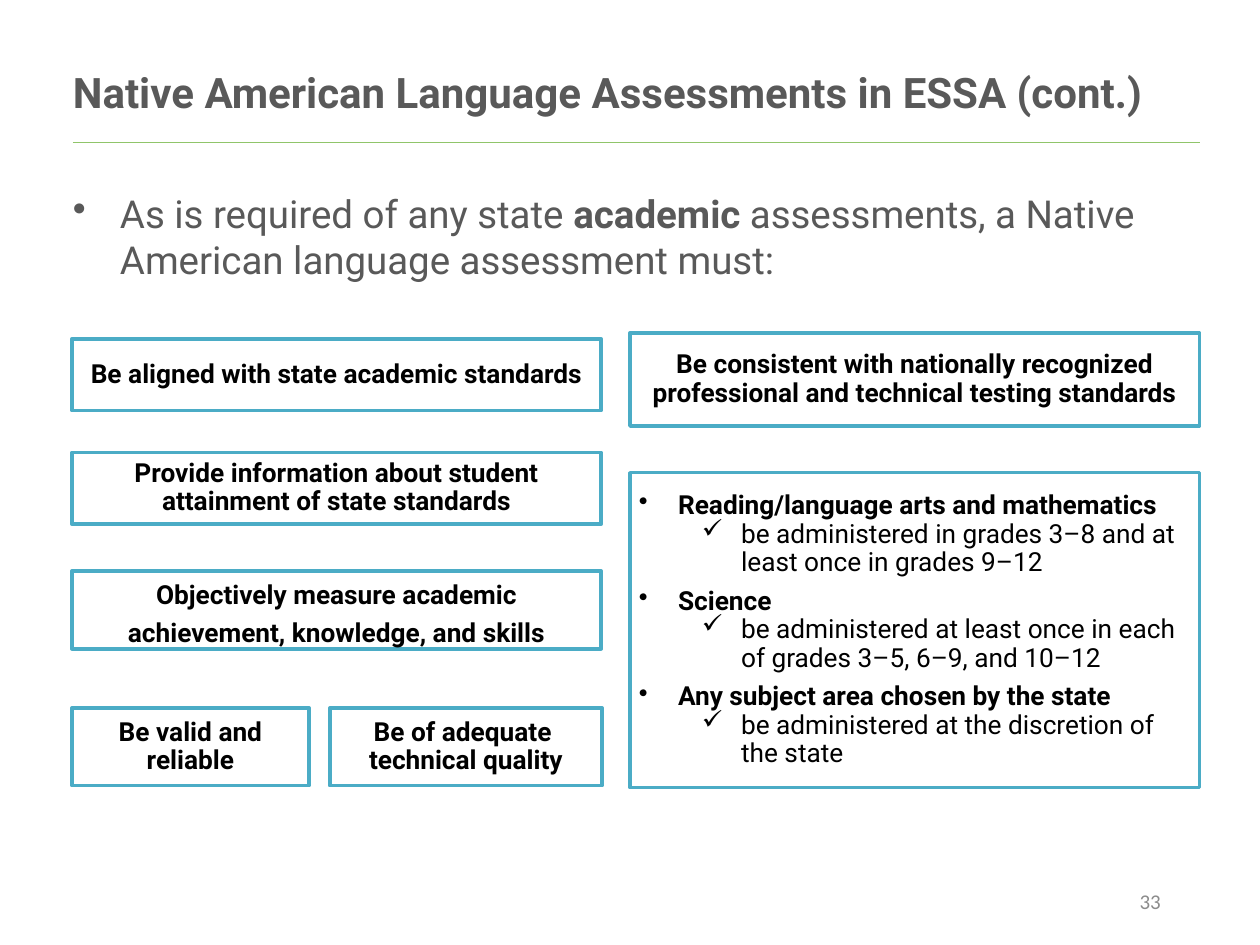
from dataclasses import dataclass

from lxml import etree
from pptx import Presentation
from pptx.dml.color import RGBColor
from pptx.enum.shapes import MSO_CONNECTOR, MSO_SHAPE
from pptx.enum.text import MSO_ANCHOR, PP_ALIGN
from pptx.oxml.ns import qn
from pptx.util import Cm, Pt

STRAIGHT = MSO_CONNECTOR.STRAIGHT
RECTANGLE = MSO_SHAPE.RECTANGLE
TOP, MIDDLE = MSO_ANCHOR.TOP, MSO_ANCHOR.MIDDLE
LEFT, CENTER, RIGHT = PP_ALIGN.LEFT, PP_ALIGN.CENTER, PP_ALIGN.RIGHT

COLORS = {
    "white": "FFFFFF",
    "black": "000000",
    "heading": "595959",
    "rule": "90C56A",
    "border": "4BACC6",
    "number": "8C8C8C",
}
COLUMN_LEFT, COLUMN_WIDTH = 1.45, 10.67
DETAIL_LEFT, DETAIL_WIDTH = 12.7, 11.48
HANGING = 0.79


@dataclass
class Box:
    left: float
    top: float
    width: float
    height: float


@dataclass
class Requirement:
    box: Box
    text: str
    line_spacing: float = 0.9


@dataclass
class Subject:
    name: str
    rule: str


REQUIREMENTS = [
    Requirement(Box(COLUMN_LEFT, 6.83, COLUMN_WIDTH, 1.45),
                "Be aligned with state academic standards"),
    Requirement(Box(COLUMN_LEFT, 9.12, COLUMN_WIDTH, 1.45),
                "Provide information about student attainment of state standards"),
    Requirement(Box(COLUMN_LEFT, 11.51, COLUMN_WIDTH, 1.57),
                "Objectively measure academic achievement, knowledge, and skills", 1.2),
    Requirement(Box(COLUMN_LEFT, 14.27, 4.78, 1.57), "Be valid and reliable"),
    Requirement(Box(DETAIL_LEFT, 6.71, DETAIL_WIDTH, 1.88),
                "Be consistent with nationally recognized professional "
                "and technical testing standards"),
    Requirement(Box(6.65, 14.27, 5.49, 1.57), "Be of adequate \vtechnical quality"),
]
SUBJECTS = [
    Subject("Reading/language arts and mathematics",
            "be administered in grades 3–8 and at least once in grades 9–12"),
    Subject("Science",
            "be administered at least once in each of grades 3–5, 6–9, and 10–12"),
    Subject("Any subject area chosen by the state",
            "be administered at the discretion of the state"),
]


def color(name: str) -> RGBColor:
    return RGBColor.from_string(COLORS[name])


def format_runs(paragraph, size: float, color_name: str, bold: bool = False,
                font_name: str = "Roboto") -> None:
    for run in paragraph.runs:
        run.font.name = font_name
        run.font.size = Pt(size)
        run.font.bold = bold
        run.font.color.rgb = color(color_name)


def add_bullet(paragraph, character: str, margin: float, hanging: float) -> None:
    properties = paragraph._p.get_or_add_pPr()
    properties.set("marL", str(Cm(margin)))
    properties.set("indent", str(-Cm(hanging)))
    etree.SubElement(properties, qn("a:buChar")).set("char", character)


def add_text_box(slide, box: Box, text: str, anchor: MSO_ANCHOR, alignment: PP_ALIGN):
    shape = slide.shapes.add_textbox(Cm(box.left), Cm(box.top), Cm(box.width), Cm(box.height))
    text_frame = shape.text_frame
    text_frame.word_wrap = True
    text_frame.vertical_anchor = anchor
    text_frame.text = text
    paragraph = text_frame.paragraphs[0]
    paragraph.alignment = alignment
    return paragraph


def add_frame(slide, box: Box):
    shape = slide.shapes.add_shape(
        RECTANGLE, Cm(box.left), Cm(box.top), Cm(box.width), Cm(box.height))
    shape.shadow.inherit = False
    shape.fill.solid()
    shape.fill.fore_color.rgb = color("white")
    shape.line.color.rgb = color("border")
    shape.line.width = Pt(2)
    text_frame = shape.text_frame
    text_frame.word_wrap = True
    text_frame.vertical_anchor = MIDDLE
    text_frame.margin_left = text_frame.margin_right = Cm(0.18)
    text_frame.margin_top = text_frame.margin_bottom = Cm(0.18)
    return text_frame


def add_requirement(slide, requirement: Requirement) -> None:
    paragraph = add_frame(slide, requirement.box).paragraphs[0]
    paragraph.text = requirement.text
    paragraph.alignment = CENTER
    paragraph.line_spacing = requirement.line_spacing
    format_runs(paragraph, 15, "black", bold=True)


def add_subjects(slide, box: Box, subjects: list[Subject]) -> None:
    text_frame = add_frame(slide, box)
    for index, subject in enumerate(subjects):
        name = text_frame.add_paragraph() if index else text_frame.paragraphs[0]
        rule = text_frame.add_paragraph()
        name.text, rule.text = subject.name, subject.rule
        rule.level = 1
        add_bullet(name, "•", HANGING, HANGING)
        add_bullet(rule, "✓", 2.06, HANGING)
        for paragraph in (name, rule):
            paragraph.alignment = LEFT
            paragraph.line_spacing = 0.9
            format_runs(paragraph, 15, "black", bold=paragraph is name)
        if index < len(subjects) - 1:
            rule.space_after = Pt(6)


def add_rule(slide, left: float, right: float, top: float) -> None:
    connector = slide.shapes.add_connector(STRAIGHT, Cm(left), Cm(top), Cm(right), Cm(top))
    connector.line.color.rgb = color("rule")
    connector.line.width = Pt(1)
    etree.SubElement(connector._element.spPr, qn("a:effectLst"))


def add_introduction(slide) -> None:
    paragraph = add_text_box(slide, Box(1.22, 3.71, 22.94, 2.4),
                             "As is required of any state ", TOP, LEFT)
    add_bullet(paragraph, "•", 0.95, 0.95)
    emphasis = paragraph.add_run()
    emphasis.text = "academic"
    paragraph.add_run().text = " assessments, a Native American language assessment must:"
    format_runs(paragraph, 22, "heading")
    emphasis.font.bold = True


def main() -> None:
    presentation = Presentation()
    presentation.slide_width, presentation.slide_height = Cm(25.4), Cm(19.05)
    slide = presentation.slides.add_slide(presentation.slide_layouts[6])

    add_rule(slide, 1.47, 24.2, 2.87)
    title = add_text_box(slide, Box(1.22, 0.94, 23.42, 1.83),
                         "Native American Language Assessments in ESSA (cont.)", MIDDLE, LEFT)
    format_runs(title, 24, "heading", bold=True)
    add_introduction(slide)
    for requirement in REQUIREMENTS:
        add_requirement(slide, requirement)
    add_subjects(slide, Box(DETAIL_LEFT, 9.53, DETAIL_WIDTH, 6.35), SUBJECTS)
    number = add_text_box(slide, Box(17.93, 17.65, 5.72, 1.02), "33", MIDDLE, RIGHT)
    format_runs(number, 12, "number", font_name="Calibri")

    presentation.save("out.pptx")


if __name__ == "__main__":
    main()
